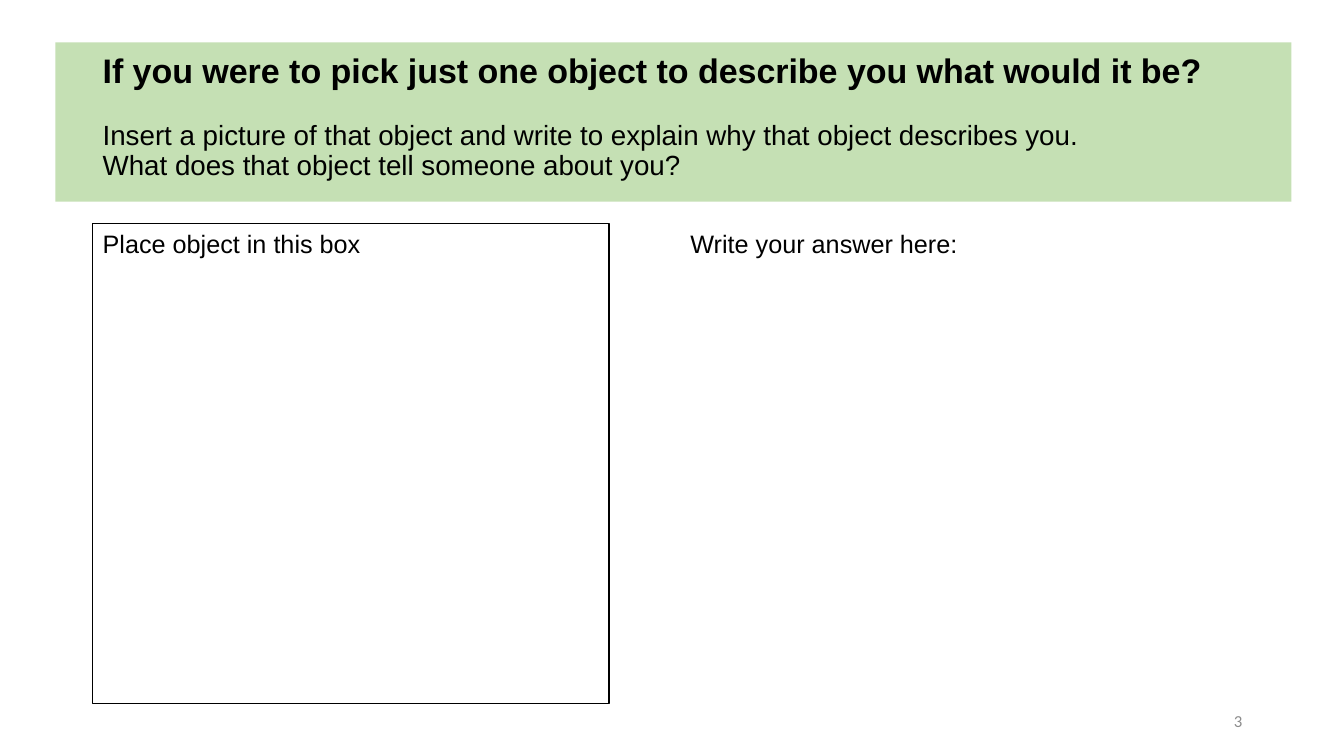
from dataclasses import dataclass

from pptx import Presentation
from pptx.dml.color import RGBColor
from pptx.enum.shapes import MSO_SHAPE
from pptx.enum.text import MSO_ANCHOR, PP_ALIGN
from pptx.util import Inches, Pt

RECTANGLE = MSO_SHAPE.RECTANGLE
TOP, MIDDLE = MSO_ANCHOR.TOP, MSO_ANCHOR.MIDDLE
LEFT, RIGHT = PP_ALIGN.LEFT, PP_ALIGN.RIGHT

BLACK = RGBColor(0x00, 0x00, 0x00)
WHITE = RGBColor(0xFF, 0xFF, 0xFF)
GREEN = RGBColor(0xC5, 0xE0, 0xB4)
GRAY = RGBColor(0x8C, 0x8C, 0x8C)

MARGIN = 0.92
CONTENT_TOP = 2.22
LABEL_HEIGHT = 0.4


@dataclass(frozen=True)
class Box:
    left: float
    top: float
    width: float
    height: float


@dataclass(frozen=True)
class Panel:
    box: Box
    fill: RGBColor
    line: RGBColor | None = None


@dataclass(frozen=True)
class Line:
    text: str
    size: float
    bold: bool = False
    font: str = "Arial"
    color: RGBColor = BLACK
    space_before: float = 0
    line_spacing: float = 1.0
    alignment: PP_ALIGN = LEFT


@dataclass(frozen=True)
class TextBlock:
    box: Box
    lines: tuple[Line, ...]
    anchor: MSO_ANCHOR = TOP
    top_inset: float = 0.05


PANELS = (
    Panel(Box(0.55, 0.42, 12.26, 1.58), GREEN),
    Panel(Box(MARGIN, CONTENT_TOP, 5.12, 4.76), WHITE, BLACK),
)

TEXT_BLOCKS = (
    TextBlock(
        Box(MARGIN, 0.52, 11.5, 1.58),
        (
            Line(
                "If you were to pick just one object to describe you what would it be?",
                24.3,
                bold=True,
                line_spacing=0.9,
            ),
            Line(
                "Insert a picture of that object and write to explain why that object "
                "describes you.\vWhat does that object tell someone about you?",
                19.8,
                space_before=22,
                line_spacing=0.9,
            ),
        ),
        top_inset=0.02,
    ),
    TextBlock(
        Box(MARGIN, CONTENT_TOP, 5.25, LABEL_HEIGHT),
        (Line("Place object in this box", 18),),
    ),
    TextBlock(
        Box(6.75, CONTENT_TOP, 5.67, LABEL_HEIGHT),
        (Line("Write your answer here:", 18),),
    ),
    TextBlock(
        Box(9.42, 6.95, 3, LABEL_HEIGHT),
        (Line("3", 12, font="Calibri", color=GRAY, alignment=RIGHT),),
        anchor=MIDDLE,
    ),
)


def lengths(box: Box) -> tuple[Inches, ...]:
    return tuple(Inches(value) for value in (box.left, box.top, box.width, box.height))


def draw_panel(slide, panel: Panel) -> None:
    shape = slide.shapes.add_shape(RECTANGLE, *lengths(panel.box))
    shape.shadow.inherit = False
    shape.fill.solid()
    shape.fill.fore_color.rgb = panel.fill
    if panel.line is None:
        shape.line.fill.background()
    else:
        shape.line.color.rgb = panel.line
        shape.line.width = Pt(1)


def draw_text(slide, block: TextBlock) -> None:
    text_frame = slide.shapes.add_textbox(*lengths(block.box)).text_frame
    text_frame.word_wrap = True
    text_frame.vertical_anchor = block.anchor
    text_frame.margin_top = Inches(block.top_inset)
    text_frame.text = "\n".join(line.text for line in block.lines)
    for paragraph, line in zip(text_frame.paragraphs, block.lines):
        paragraph.alignment = line.alignment
        paragraph.line_spacing = line.line_spacing
        paragraph.space_before = Pt(line.space_before)
        for run in paragraph.runs:
            run.font.name = line.font
            run.font.size = Pt(line.size)
            run.font.bold = line.bold
            run.font.color.rgb = line.color


def main() -> None:
    presentation = Presentation()
    presentation.slide_width = Inches(13.33)
    presentation.slide_height = Inches(7.5)
    slide = presentation.slides.add_slide(presentation.slide_layouts[6])
    for panel in PANELS:
        draw_panel(slide, panel)
    for block in TEXT_BLOCKS:
        draw_text(slide, block)
    presentation.save("out.pptx")


if __name__ == "__main__":
    main()
